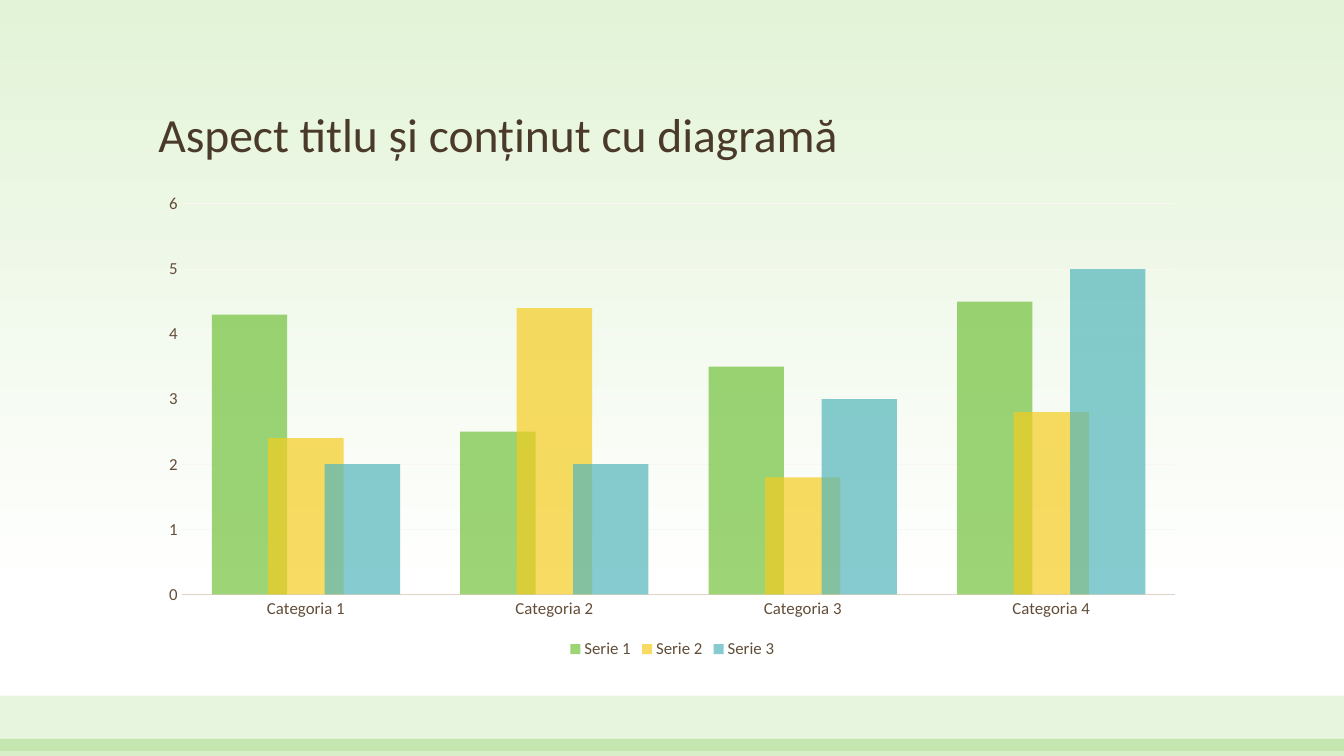
from dataclasses import dataclass

from lxml.etree import SubElement
from pptx import Presentation
from pptx.chart.data import CategoryChartData
from pptx.dml.color import RGBColor
from pptx.enum.chart import XL_CHART_TYPE, XL_LEGEND_POSITION, XL_TICK_MARK
from pptx.enum.shapes import MSO_SHAPE
from pptx.enum.text import MSO_ANCHOR, MSO_AUTO_SIZE, PP_ALIGN
from pptx.oxml.ns import qn
from pptx.util import Pt


@dataclass(frozen=True)
class Theme:
    font: str = "Calibri"
    title_size: int = 34
    label_size: int = 12
    title: str = "4A3A2A"
    label: str = "624D38"
    axis: str = "DFD2C6"
    grid: str = "F9F6F4"
    sky: str = "E3F3D8"
    ground: str = "FFFFFF"
    green: str = "72C23C"
    yellow: str = "F4CC20"
    teal: str = "53B6BB"


THEME = Theme()
PAGE_WIDTH, PAGE_HEIGHT = 960, 540
CONTENT_LEFT, CONTENT_WIDTH = 105.84, 748.8
CATEGORIES = ["Categoria 1", "Categoria 2", "Categoria 3", "Categoria 4"]
SERIES = [
    ("Serie 1", (4.3, 2.5, 3.5, 4.5), THEME.green),
    ("Serie 2", (2.4, 4.4, 1.8, 2.8), THEME.yellow),
    ("Serie 3", (2, 2, 3, 5), THEME.teal),
]


def rgb(color):
    return RGBColor.from_string(color)


def style_font(font, size, color):
    font.name = THEME.font
    font.size = Pt(size)
    font.color.rgb = rgb(color)


def fill_translucent(shape_format, properties, color, opacity):
    shape_format.fill.solid()
    shape_format.fill.fore_color.rgb = rgb(color)
    color_element = properties.find(qn("a:solidFill")).find(qn("a:srgbClr"))
    SubElement(color_element, qn("a:alpha")).set("val", str(opacity * 1000))


def paint_background(page):
    fill = page.background.fill
    fill.gradient()
    fill.gradient_angle = 270
    stops = [(0, THEME.sky), (0.79, THEME.ground)]
    for stop, (position, color) in zip(fill.gradient_stops, stops):
        stop.position = position
        stop.color.rgb = rgb(color)


def add_band(page, top, height, opacity):
    band = page.shapes.add_shape(
        MSO_SHAPE.RECTANGLE, 0, Pt(top), Pt(PAGE_WIDTH), Pt(height))
    band.shadow.inherit = False
    band.line.fill.background()
    fill_translucent(band, band.element.spPr, THEME.green, opacity)
    page.shapes.title.element.addprevious(band.element)


def set_title(page, text):
    title = page.shapes.title
    title.left, title.top = Pt(CONTENT_LEFT), Pt(34.56)
    title.width, title.height = Pt(CONTENT_WIDTH), Pt(85.68)
    frame = title.text_frame
    frame.text = text
    frame.word_wrap = True
    frame.auto_size = MSO_AUTO_SIZE.NONE
    frame.vertical_anchor = MSO_ANCHOR.BOTTOM
    para = frame.paragraphs[0]
    para.alignment = PP_ALIGN.LEFT
    para.line_spacing = 0.9
    for span in para.runs:
        style_font(span.font, THEME.title_size, THEME.title)


def style_axis(axis):
    axis.major_tick_mark = XL_TICK_MARK.NONE
    axis.minor_tick_mark = XL_TICK_MARK.NONE
    style_font(axis.tick_labels.font, THEME.label_size, THEME.label)


def style_line(line, color, width):
    line.color.rgb = rgb(color)
    line.width = Pt(width)


def add_column_chart(page):
    data = CategoryChartData()
    data.categories = CATEGORIES
    for name, values, _ in SERIES:
        data.add_series(name, values)
    chart = page.shapes.add_chart(
        XL_CHART_TYPE.COLUMN_CLUSTERED, Pt(CONTENT_LEFT), Pt(131.76),
        Pt(CONTENT_WIDTH), Pt(342), data).chart
    chart.has_title = False
    style_font(chart.font, 10, THEME.label)

    chart.has_legend = True
    chart.legend.position = XL_LEGEND_POSITION.BOTTOM
    chart.legend.include_in_layout = False
    style_font(chart.legend.font, THEME.label_size, THEME.label)

    style_axis(chart.category_axis)
    style_line(chart.category_axis.format.line, THEME.axis, 1.25)

    value_axis = chart.value_axis
    style_axis(value_axis)
    value_axis.minimum_scale, value_axis.maximum_scale = 0, 6
    value_axis.major_unit = 1
    value_axis.format.line.fill.background()
    value_axis.has_major_gridlines = True
    style_line(value_axis.major_gridlines.format.line, THEME.grid, 0.75)

    plot = chart.plots[0]
    plot.gap_width, plot.overlap = 80, 25
    plot.vary_by_categories = False
    for series, (_, _, color) in zip(plot.series, SERIES):
        series.invert_if_negative = False
        properties = series.format.fill and series._element.get_or_add_spPr()
        fill_translucent(series.format, properties, color, 70)


def main():
    deck = Presentation()
    deck.slide_width, deck.slide_height = Pt(PAGE_WIDTH), Pt(PAGE_HEIGHT)
    page = deck.slides.add_slide(deck.slide_layouts[5])
    paint_background(page)
    add_band(page, 496.8, 39.6, 17)
    add_band(page, 527.76, 12.24, 28)
    set_title(page, "Aspect titlu și conținut cu diagramă")
    add_column_chart(page)
    deck.save("out.pptx")


if __name__ == "__main__":
    main()
